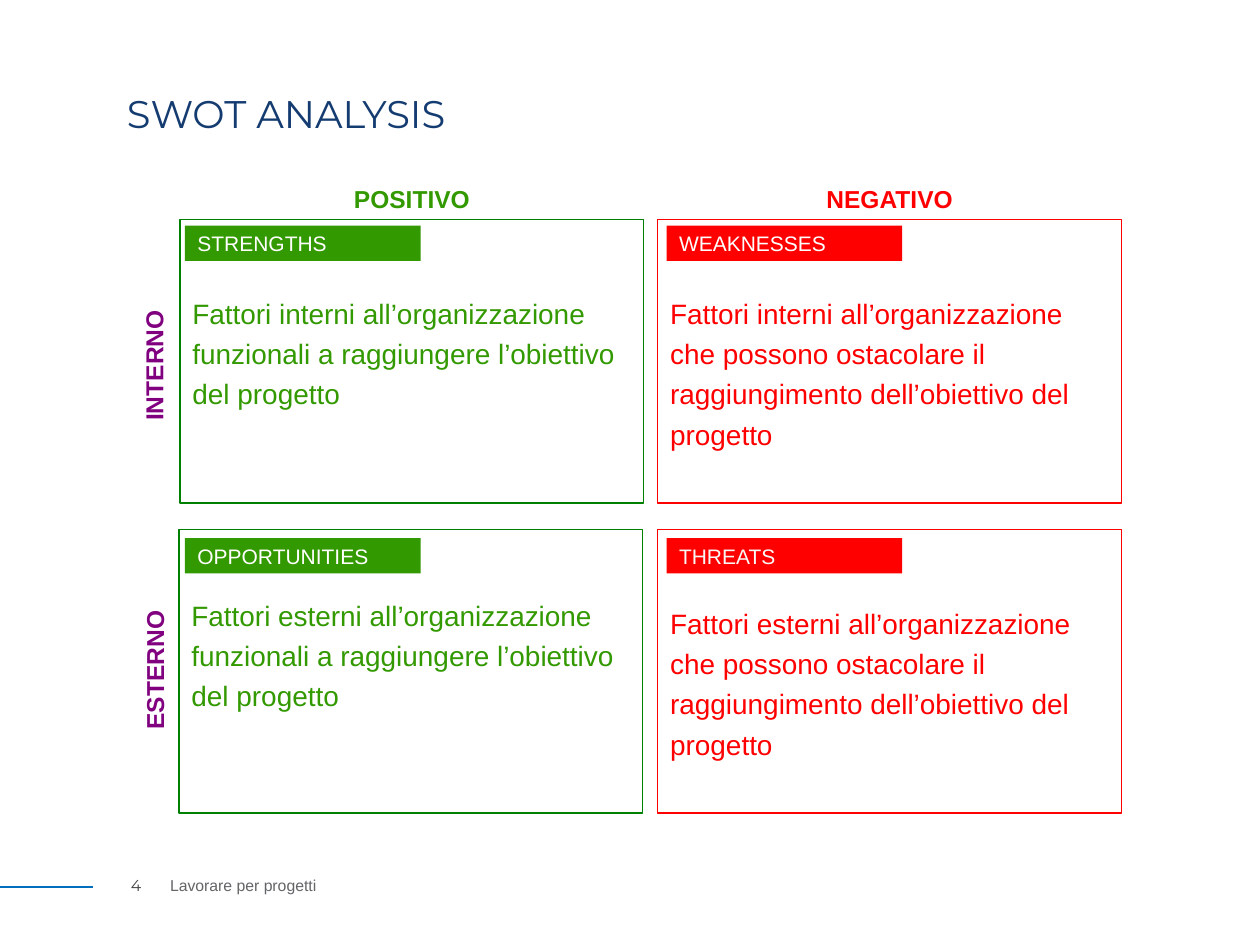
from lxml.etree import SubElement
from pptx import Presentation
from pptx.dml.color import RGBColor
from pptx.enum.shapes import MSO_CONNECTOR as Connector, MSO_SHAPE as Preset
from pptx.enum.text import MSO_ANCHOR as Anchor, PP_ALIGN as Align
from pptx.oxml.ns import qn
from pptx.util import Cm, Pt

COLORS = {
    "white": "FFFFFF", "threats": "F9F7F5", "green": "339900", "green_border": "008000",
    "red": "FF0000", "purple": "800080", "navy": "153C71", "blue": "006EBB",
    "number": "454544", "footer": "646567",
}
ROW_TOPS = (4.42, 10.67)
BOX_WIDTH, BOX_HEIGHT = 9.35, 5.72
FOOTER_INSETS = (0, 0.13, 0.25, 0)
QUADRANTS = (
    ("STRENGTHS", "Fattori interni all’organizzazione funzionali a raggiungere l’obiettivo del progetto",
     3.63, 0, 1.42, "green", "green_border", "white"),
    ("WEAKNESSES", "Fattori interni all’organizzazione che possono ostacolare il raggiungimento "
     "dell’obiettivo del progetto", 13.26, 0, 1.42, "red", "red", "white"),
    ("OPPORTUNITIES", "Fattori esterni all’organizzazione funzionali a raggiungere l’obiettivo del progetto",
     3.61, 1, 1.26, "green", "green_border", "white"),
    ("THREATS", "Fattori esterni all’organizzazione che possono ostacolare il raggiungimento "
     "dell’obiettivo del progetto", 13.26, 1, 1.42, "red", "red", "threats"),
)


def rgb(name):
    """Return the named colour."""
    return RGBColor.from_string(COLORS[name])


def write(shape, text, size, color, font="Arial", bold=False, align=Align.LEFT,
          anchor=Anchor.MIDDLE, spacing=None, insets=(0.25, 0.13, 0.25, 0.13)):
    """Put one formatted run into a shape."""
    frame = shape.text_frame
    frame.word_wrap = True
    frame.vertical_anchor = anchor
    frame.margin_left, frame.margin_top, frame.margin_right, frame.margin_bottom = map(Cm, insets)
    paragraph = frame.paragraphs[0]
    paragraph.alignment = align
    if spacing:
        paragraph.line_spacing = spacing
    run = paragraph.add_run()
    run.text = text
    run.font.name = font
    run.font.size = Pt(size)
    run.font.bold = bold
    run.font.color.rgb = rgb(color)


def add_box(slide, place, fill, border=None):
    """Add a flat rectangle with an optional thin border."""
    shape = slide.shapes.add_shape(Preset.RECTANGLE, *map(Cm, place))
    shape.shadow.inherit = False
    shape.fill.solid()
    shape.fill.fore_color.rgb = rgb(fill)
    if border:
        shape.line.color.rgb = rgb(border)
        shape.line.width = Pt(0.75)
    else:
        shape.line.fill.background()
    return shape


def add_label(slide, place, text, size, color, rotation=0, **style):
    """Add a text box, turned if asked."""
    shape = slide.shapes.add_textbox(*map(Cm, place))
    shape.rotation = rotation
    write(shape, text, size, color, **style)


def add_quadrant(slide, heading, body, left, row, text_top, color, border, heading_color):
    """Add a bordered quadrant with its body text and heading tag."""
    top = ROW_TOPS[row]
    box = add_box(slide, (left, top, BOX_WIDTH, BOX_HEIGHT), "white", border)
    write(box, body, 16, color, anchor=Anchor.TOP, spacing=1.2, insets=(0.25, text_top, 0.25, 0.13))
    tag_left = 3.73 if color == "green" else 13.44
    tag = add_box(slide, (tag_left, (4.55, 10.85)[row], 4.75, 0.71), color)
    write(tag, heading, 12, heading_color)


def add_rule(slide, left, right, top):
    """Add the horizontal footer rule."""
    rule = slide.shapes.add_connector(Connector.STRAIGHT, Cm(left), Cm(top), Cm(right), Cm(top))
    rule.line.color.rgb = rgb("blue")
    rule.line.width = Pt(1)
    SubElement(rule._element.spPr, qn("a:effectLst"))


def main():
    """Build and save the SWOT slide."""
    presentation = Presentation()
    presentation.slide_width, presentation.slide_height = Cm(25.4), Cm(19.05)
    slide = presentation.slides.add_slide(presentation.slide_layouts[6])

    add_rule(slide, 0, 1.88, 17.88)
    for quadrant in QUADRANTS:
        add_quadrant(slide, *quadrant)

    heading = {"bold": True, "align": Align.CENTER}
    add_label(slide, (3.63, 3.68, 9.35, 0.66), "POSITIVO", 14, "green", **heading)
    add_label(slide, (13.16, 3.68, 9.55, 0.66), "NEGATIVO", 14, "red", **heading)
    add_label(slide, (0.15, 6.99, 5.89, 0.76), "INTERNO", 14, "purple", rotation=270, **heading)
    add_label(slide, (0.25, 13.13, 5.72, 0.76), "ESTERNO", 14, "purple", rotation=270, **heading)

    add_label(slide, (2.31, 1.8, 20.8, 1.12), "SWOT ANALYSIS", 22, "navy", font="Montserrat",
              anchor=Anchor.TOP, spacing=0.9)
    add_label(slide, (2.31, 17.27, 1.12, 1.02), "4", 9, "number", font="Montserrat",
              align=Align.CENTER, insets=FOOTER_INSETS)
    add_label(slide, (3.43, 17.27, 13, 1.02), "Lavorare per progetti", 9, "footer",
              insets=FOOTER_INSETS)
    presentation.save("out.pptx")


if __name__ == "__main__":
    main()
